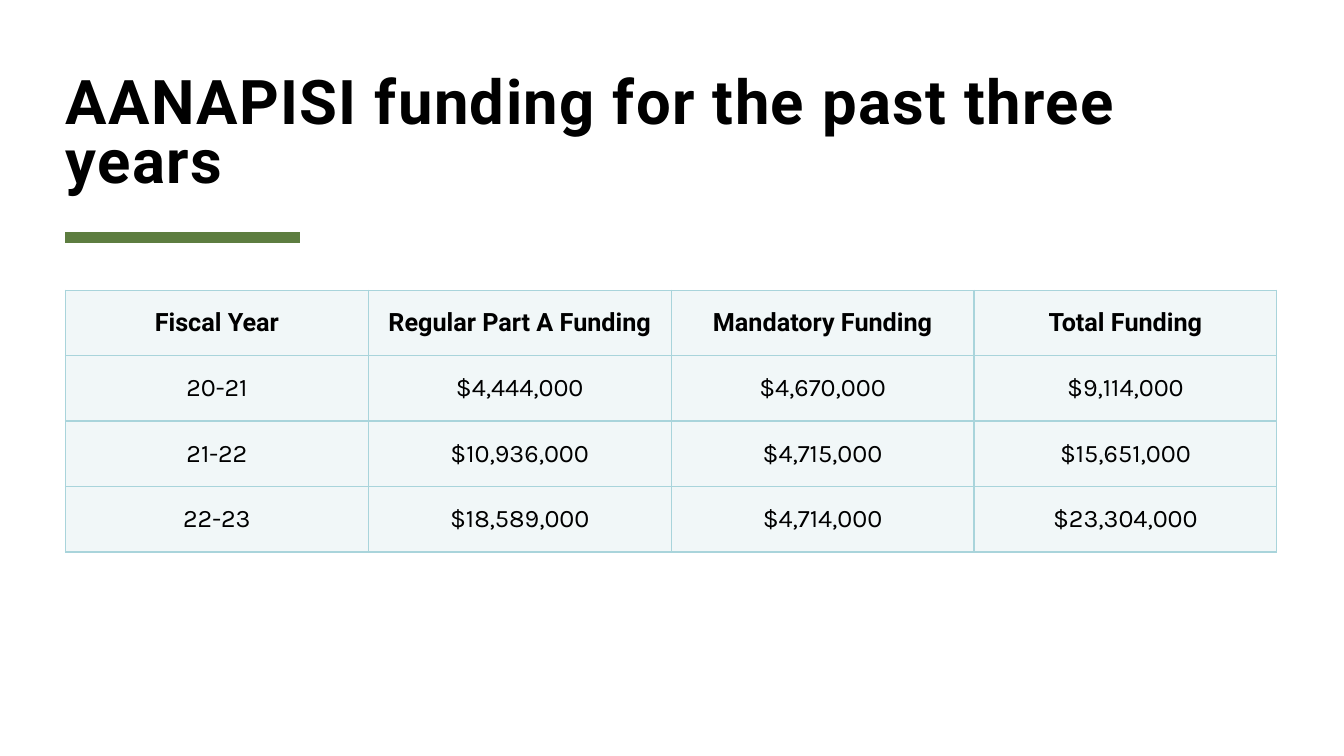
from lxml.etree import SubElement
from pptx import Presentation
from pptx.dml.color import RGBColor
from pptx.enum.shapes import MSO_CONNECTOR
from pptx.enum.text import MSO_ANCHOR, PP_ALIGN
from pptx.oxml.ns import qn
from pptx.util import Cm, Pt

COLORS = {"text": "000000", "accent": "5D7D40", "cell": "F1F7F8", "border": "A9D4DB"}
FUNDING = [
    ["Fiscal Year", "Regular Part A Funding", "Mandatory Funding", "Total Funding"],
    ["20-21", "$4,444,000", "$4,670,000", "$9,114,000"],
    ["21-22", "$10,936,000", "$4,715,000", "$15,651,000"],
    ["22-23", "$18,589,000", "$4,714,000", "$23,304,000"],
]
LEFT = Cm(1.65)


def add_text(paragraph, text, size, font, bold):
    run = paragraph.add_run()
    run.text = text
    run.font.size = Pt(size)
    run.font.name = font
    run.font.bold = bold
    run.font.color.rgb = RGBColor.from_string(COLORS["text"])
    return run


def add_border(cell, side):
    edge = SubElement(cell._tc.get_or_add_tcPr(), qn(f"a:{side}"), w=str(Pt(1)))
    fill = SubElement(edge, qn("a:solidFill"))
    SubElement(fill, qn("a:srgbClr"), val=COLORS["border"])


prs = Presentation()
prs.slide_width = Cm(33.87)
prs.slide_height = Cm(19.05)
slide = prs.slides.add_slide(prs.slide_layouts[6])

underline = slide.shapes.add_connector(
    MSO_CONNECTOR.STRAIGHT, LEFT, Cm(5.98), Cm(7.57), Cm(5.98)
)
underline.line.color.rgb = RGBColor.from_string(COLORS["accent"])
underline.line.width = Pt(8)
SubElement(underline._element.spPr, qn("a:effectLst"))

heading = slide.shapes.add_textbox(LEFT, Cm(1.63), Cm(30.48), Cm(3.3)).text_frame
heading.word_wrap = True
heading.vertical_anchor = MSO_ANCHOR.BOTTOM
heading.margin_left = heading.margin_right = 0
heading.margin_top = heading.margin_bottom = 0
heading.paragraphs[0].line_spacing = 0.8
heading_run = add_text(
    heading.paragraphs[0], "AANAPISI funding for the past three years", 44, "Roboto", True
)
heading_run.font._element.set("spc", "100")

funding = slide.shapes.add_table(
    len(FUNDING), len(FUNDING[0]), LEFT, Cm(7.31), Cm(30.53), Cm(6.6)
).table
funding.horz_banding = False

for row, values in enumerate(FUNDING):
    is_header = row == 0
    for column, value in enumerate(values):
        cell = funding.cell(row, column)
        cell.vertical_anchor = MSO_ANCHOR.MIDDLE
        for side in ("lnL", "lnR", "lnT", "lnB"):
            add_border(cell, side)
        cell.fill.solid()
        cell.fill.fore_color.rgb = RGBColor.from_string(COLORS["cell"])
        paragraph = cell.text_frame.paragraphs[0]
        paragraph.alignment = PP_ALIGN.CENTER
        add_text(paragraph, value, 18, "Roboto" if is_header else "Karla", is_header)

prs.save("out.pptx")
